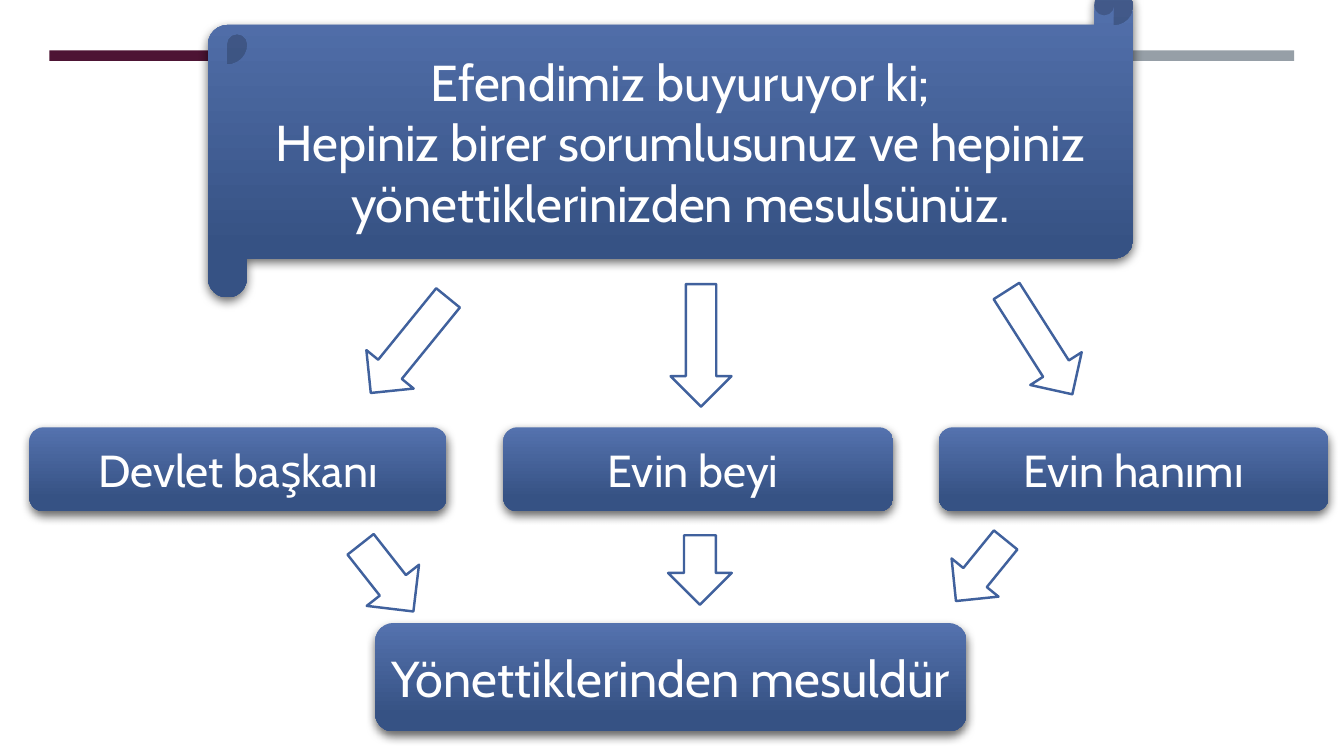
from lxml import etree
from pptx import Presentation
from pptx.dml.color import RGBColor
from pptx.enum.shapes import MSO_SHAPE
from pptx.enum.text import MSO_ANCHOR, PP_ALIGN
from pptx.oxml.ns import qn
from pptx.util import Pt

RECTANGLE = MSO_SHAPE.RECTANGLE
ROUNDED = MSO_SHAPE.ROUNDED_RECTANGLE
SCROLL = MSO_SHAPE.HORIZONTAL_SCROLL
DOWN_ARROW = MSO_SHAPE.DOWN_ARROW
CENTER = PP_ALIGN.CENTER
MIDDLE = MSO_ANCHOR.MIDDLE

GRADIENT = ((0, "5472AE"), (0.84, "365284"))
SHADOW = {"blurRad": Pt(7), "dist": Pt(3), "dir": 84 * 60000, "rotWithShape": 0}
SHADOW_OPACITY = 60000
FRAME_FORMAT = {
    "word_wrap": True,
    "vertical_anchor": MIDDLE,
    "margin_left": Pt(3.6),
    "margin_right": Pt(3.6),
}


def color(hex_value):
    return RGBColor.from_string(hex_value)


def apply_format(target, values):
    for name, value in values.items():
        setattr(target, name, value)


class SlideBuilder:
    def __init__(self, slide):
        self.slide = slide
        self.font_format = {"name": "Cabin", "bold": False}
        self.text_color = "FFFFFF"
        self.arrow_fill = "FFFFFF"
        self.arrow_line = "40619D"

    def add_preset(self, preset, box):
        shape = self.slide.shapes.add_shape(preset, *map(Pt, box))
        shape.shadow.inherit = False
        return shape

    def bar(self, box, fill):
        shape = self.add_preset(RECTANGLE, box)
        shape.fill.solid()
        shape.fill.fore_color.rgb = color(fill)
        shape.line.fill.background()

    def arrow(self, box, rotation):
        shape = self.add_preset(DOWN_ARROW, box)
        shape.rotation = rotation
        shape.fill.solid()
        shape.fill.fore_color.rgb = color(self.arrow_fill)
        shape.line.color.rgb = color(self.arrow_line)
        shape.line.width = Pt(1.75)

    def panel(self, preset, box, size, lines):
        """Add a shaded, shadowed shape with one centred paragraph per line."""
        shape = self.add_preset(preset, box)
        shape.line.fill.background()
        shape.fill.gradient()
        shape.fill.gradient_angle = 270
        for stop, (position, hex_value) in zip(shape.fill.gradient_stops, GRADIENT):
            stop.position = position
            stop.color.rgb = color(hex_value)
        self.drop_shadow(shape)
        frame = shape.text_frame
        apply_format(frame, FRAME_FORMAT)
        for index, line in enumerate(lines):
            paragraph = frame.add_paragraph() if index else frame.paragraphs[0]
            paragraph.alignment = CENTER
            run = paragraph.add_run()
            run.text = line
            apply_format(run.font, {**self.font_format, "size": Pt(size)})
            run.font.color.rgb = color(self.text_color)

    def drop_shadow(self, shape):
        effects = shape.element.spPr.find(qn("a:effectLst"))
        attributes = {name: str(value) for name, value in SHADOW.items()}
        shadow = etree.SubElement(effects, qn("a:outerShdw"), attributes)
        shade = etree.SubElement(shadow, qn("a:srgbClr"), val="000000")
        etree.SubElement(shade, qn("a:alpha"), val=str(SHADOW_OPACITY))


def main():
    presentation = Presentation()
    presentation.slide_width = Pt(960)
    presentation.slide_height = Pt(540)
    builder = SlideBuilder(presentation.slides.add_slide(presentation.slide_layouts[6]))

    for index, fill in enumerate(("4D1434", "903163", "969FA7")):
        builder.bar((35.2 + index * 298.8, 36, 291.6, 7.5), fill)

    builder.panel(SCROLL, (148.5, -10, 661, 222.5), 36, (
        "Efendimiz buyuruyor ki;",
        "Hepiniz birer sorumlusunuz ve hepiniz yönettiklerinizden mesulsünüz.",
    ))

    for left, width, role in (
        (21, 298, "Devlet başkanı"),
        (359.5, 278.5, "Evin beyi "),
        (670.5, 278.5, "Evin hanımı"),
    ):
        builder.panel(ROUNDED, (left, 305.2, width, 60), 32, (role,))

    builder.panel(ROUNDED, (268, 445, 422.5, 77.5), 36, ("Yönettiklerinden mesuldür",))

    for box, rotation in (
        ((270.7, 203, 43.5, 87.5), 39.1),
        ((479, 203, 43.5, 87.5), 0),
        ((720.7, 201, 43.5, 87.5), 327.5),
        ((252.7, 382.3, 47.5, 61), 321.8),
        ((477.2, 382.3, 45.5, 49.7), 0),
        ((679, 379.4, 43.2, 56.2), 39.1),
    ):
        builder.arrow(box, rotation)

    presentation.save("out.pptx")


if __name__ == "__main__":
    main()
